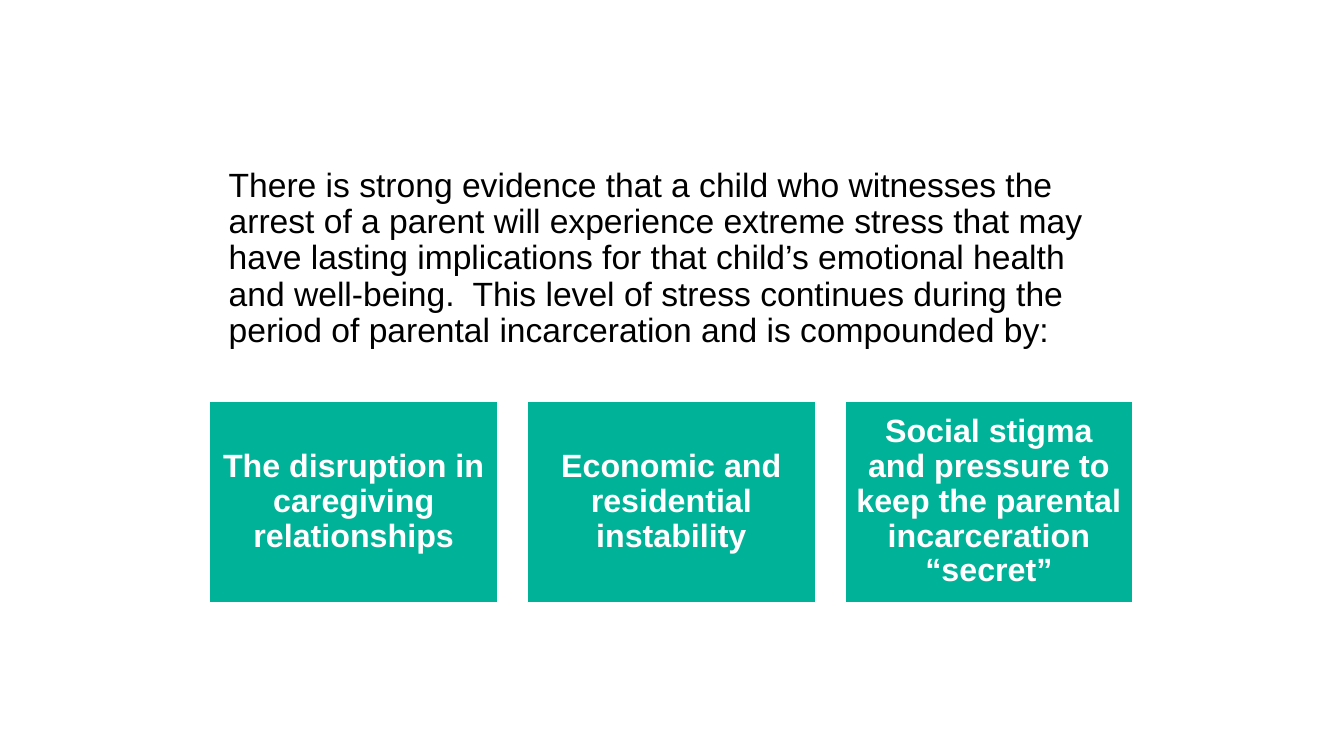
import pptx
import pptx.dml.color
import pptx.enum.shapes
import pptx.enum.text
import pptx.util
from pptx.util import Inches

BLACK = pptx.dml.color.RGBColor(0x00, 0x00, 0x00)
WHITE = pptx.dml.color.RGBColor(0xFF, 0xFF, 0xFF)
TEAL = pptx.dml.color.RGBColor(0x00, 0xB3, 0x98)

EVIDENCE = (
    "There is strong evidence that a child who witnesses the arrest of a parent "
    "will experience extreme stress that may have lasting implications for that "
    "child’s emotional health and well-being.  This level of stress continues "
    "during the period of parental incarceration and is compounded by:"
)
STRESSORS = [
    "The disruption in caregiving relationships",
    "Economic and residential instability",
    "Social stigma and pressure to keep the parental incarceration “secret”",
]
CARD_LEFT, CARD_TOP = 2.08, 3.98
CARD_WIDTH, CARD_HEIGHT = 2.86, 2
CARD_GAP = 0.29


class SlideBuilder:
    font_name = "Arial"
    line_spacing = 0.9

    def __init__(self, slide):
        self.slide = slide

    def add_text(self, text_frame, text, size, color, alignment, bold=False):
        text_frame.word_wrap = True
        paragraph = text_frame.paragraphs[0]
        paragraph.alignment = alignment
        paragraph.line_spacing = self.line_spacing
        run = paragraph.add_run()
        run.text = text
        run.font.name = self.font_name
        run.font.size = pptx.util.Pt(size)
        run.font.bold = bold
        run.font.color.rgb = color

    def add_body(self, text, left, top, width, height):
        box = self.slide.shapes.add_textbox(
            Inches(left), Inches(top), Inches(width), Inches(height))
        self.add_text(box.text_frame, text, 24, BLACK,
                      pptx.enum.text.PP_ALIGN.LEFT)

    def add_card(self, text, left, top, width, height):
        card = self.slide.shapes.add_shape(
            pptx.enum.shapes.MSO_SHAPE.RECTANGLE,
            Inches(left), Inches(top), Inches(width), Inches(height))
        card.shadow.inherit = False
        card.fill.solid()
        card.fill.fore_color.rgb = TEAL
        card.line.color.rgb = WHITE
        card.line.width = pptx.util.Pt(1)
        frame = card.text_frame
        frame.vertical_anchor = pptx.enum.text.MSO_ANCHOR.MIDDLE
        frame.margin_left = frame.margin_right = Inches(0.1)
        frame.margin_top = frame.margin_bottom = Inches(0.1)
        self.add_text(frame, text, 23, WHITE,
                      pptx.enum.text.PP_ALIGN.CENTER, bold=True)


def main():
    presentation = pptx.Presentation()
    presentation.slide_width = Inches(13.33)
    presentation.slide_height = Inches(7.5)
    blank_layout = presentation.slide_layouts[6]
    builder = SlideBuilder(presentation.slides.add_slide(blank_layout))

    builder.add_body(EVIDENCE, 2.17, 1.62, 9, 3.13)
    for index, stressor in enumerate(STRESSORS):
        builder.add_card(stressor, CARD_LEFT + index * (CARD_WIDTH + CARD_GAP),
                         CARD_TOP, CARD_WIDTH, CARD_HEIGHT)

    presentation.save("out.pptx")


if __name__ == "__main__":
    main()
